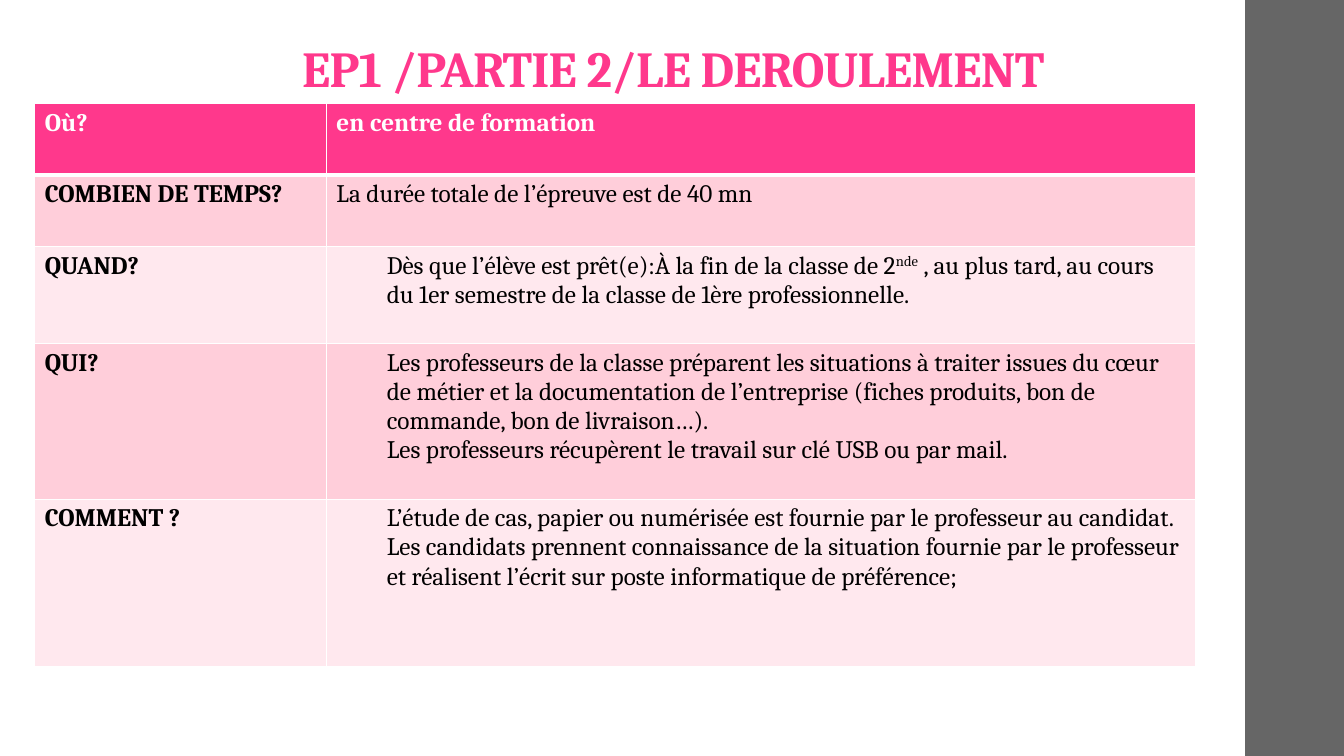
from dataclasses import dataclass

from lxml import etree
from pptx import Presentation, util as u
from pptx.dml import color
from pptx.enum import shapes, text
from pptx.oxml import ns


@dataclass(frozen=True)
class Theme:
    font: str = "Cambria"
    accent: str = "FF388C"
    sidebar: str = "666666"
    light: str = "FFFFFF"
    dark: str = "000000"
    bands: tuple = ("FFE8EE", "FFCEDA")
    title_size: int = 36
    body_size: int = 18
    thin: int = 1
    thick: int = 3


def rgb(code):
    return color.RGBColor.from_string(code)


class SlideBuilder:
    def __init__(self, deck, theme):
        self.deck = deck
        self.theme = theme
        self.slide = deck.slides.add_slide(deck.slide_layouts[5])

    def across(self, percent):
        return round(self.deck.slide_width * percent / 100)

    def down(self, percent):
        return round(self.deck.slide_height * percent / 100)

    def box(self, left, top, width, height):
        return self.across(left), self.down(top), self.across(width), self.down(height)

    def style(self, run, size, ink, bold):
        run.font.name = self.theme.font
        run.font.size = u.Pt(size)
        run.font.bold = bold
        run.font.color.rgb = rgb(ink)

    def sidebar(self, *place):
        band = self.slide.shapes.add_shape(
            shapes.MSO_SHAPE.RECTANGLE, *self.box(*place))
        band.shadow.inherit = False
        band.fill.solid()
        band.fill.fore_color.rgb = rgb(self.theme.sidebar)
        band.line.fill.background()

    def title(self, wording, *place):
        heading = self.slide.shapes.title
        heading.left, heading.top, heading.width, heading.height = self.box(*place)
        frame = heading.text_frame
        frame.text = wording
        frame.word_wrap = True
        frame.auto_size = text.MSO_AUTO_SIZE.NONE
        frame.vertical_anchor = text.MSO_ANCHOR.BOTTOM
        frame.margin_left = frame.margin_right = u.Inches(0.1)
        frame.margin_top, frame.margin_bottom = u.Inches(0.03), u.Inches(0.05)
        line = frame.paragraphs[0]
        line.alignment = text.PP_ALIGN.CENTER
        line.line_spacing = 0.9
        self.style(line.runs[0], self.theme.title_size, self.theme.accent, True)
        line.runs[0]._r.get_or_add_rPr().set("spc", "-50")

    def borders(self, cell, row):
        weights = {"L": self.theme.thin, "R": self.theme.thin,
                   "T": self.theme.thick if row == 1 else self.theme.thin,
                   "B": self.theme.thick if row == 0 else self.theme.thin}
        properties = cell._tc.get_or_add_tcPr()
        for side, weight in weights.items():
            edge = etree.SubElement(properties, ns.qn(f"a:ln{side}"), w=str(u.Pt(weight)))
            paint = etree.SubElement(edge, ns.qn("a:solidFill"))
            etree.SubElement(paint, ns.qn("a:srgbClr"), val=self.theme.light)

    def cell(self, cell, row, paragraphs, bold, indented):
        self.borders(cell, row)
        cell.fill.solid()
        cell.fill.fore_color.rgb = rgb(
            self.theme.bands[row % 2] if row else self.theme.accent)
        ink = self.theme.dark if row else self.theme.light
        cell.text_frame.text = "\n".join("".join(pieces) for pieces in paragraphs)
        for line, pieces in zip(cell.text_frame.paragraphs, paragraphs):
            if indented:
                line.level = 1
                line._p.get_or_add_pPr().set("marL", str(u.Inches(0.5)))
                line._p.get_or_add_pPr().set("indent", "0")
            line.runs[0].text = pieces[0]
            for piece in pieces[1:]:
                line.add_run().text = piece
            for position, run in enumerate(line.runs):
                self.style(run, self.theme.body_size, ink, bold)
                if position % 2:
                    run._r.get_or_add_rPr().set("baseline", "30000")

    def table(self, content, left, top, widths, heights):
        place = self.box(left, top, sum(widths), sum(heights))
        grid = self.slide.shapes.add_table(len(heights), len(widths), *place).table
        grid.first_row = grid.horz_banding = False
        for column, width in zip(grid.columns, widths):
            column.width = self.across(width)
        for line, height in zip(grid.rows, heights):
            line.height = self.down(height)
        for row, (question, answer) in enumerate(content):
            self.cell(grid.cell(row, 0), row, [[question]], True, False)
            self.cell(grid.cell(row, 1), row, answer, row == 0, row > 1)


EXAM_STEPS = [
    ("Où?", [["en centre de formation"]]),
    ("COMBIEN DE TEMPS?", [["La durée totale de l’épreuve est de 40 mn"]]),
    ("QUAND?", [[
        "Dès que l’élève est prêt(e):À la fin de la classe de 2", "nde",
        " , au plus tard, au cours du 1er semestre de la classe de "
        "1ère professionnelle."]]),
    ("QUI?", [
        ["Les professeurs de la classe préparent les situations à traiter issues "
         "du cœur de métier et la documentation de l’entreprise (fiches produits, "
         "bon de commande, bon de livraison…)."],
        ["Les professeurs récupèrent le travail sur clé USB ou par mail."]]),
    ("COMMENT ?", [
        ["L’étude de cas, papier ou numérisée est fournie par le professeur "
         "au candidat."],
        ["Les candidats prennent connaissance de la situation fournie par le "
         "professeur et réalisent l’écrit sur poste informatique de préférence;"]]),
]


def main():
    deck = Presentation()
    deck.slide_width, deck.slide_height = u.Inches(13.33), u.Inches(7.5)
    page = SlideBuilder(deck, Theme())
    page.sidebar(92.65, 0, 7.35, 100)
    page.title("EP1 /PARTIE 2/LE DEROULEMENT", 10.35, 3.87, 79.5, 9.87)
    page.table(EXAM_STEPS, 2.58, 13.73, widths=(21.7, 64.65),
               heights=(9.4, 9.45, 12.9, 20.55, 22.2))
    deck.save("out.pptx")


if __name__ == "__main__":
    main()
